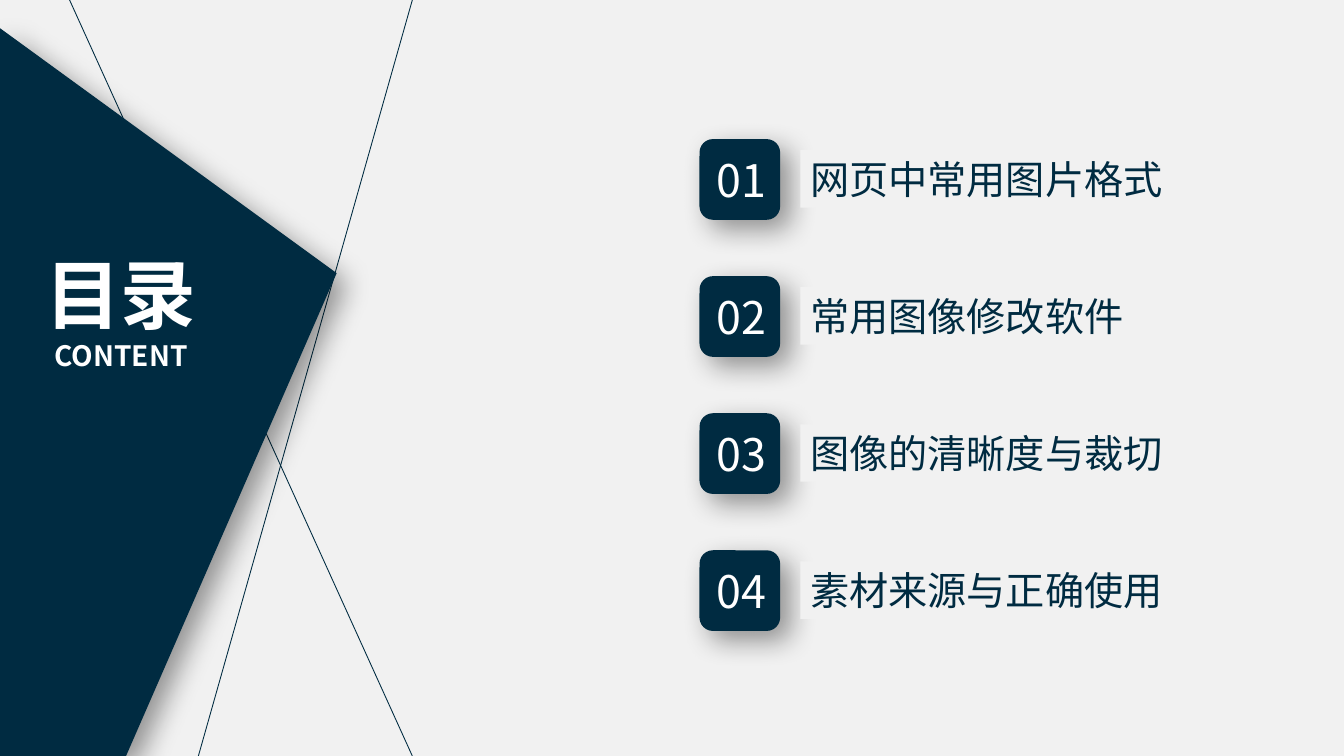
from dataclasses import dataclass

from lxml.etree import SubElement
from pptx import Presentation
from pptx.dml.color import RGBColor
from pptx.enum.shapes import MSO_CONNECTOR, MSO_SHAPE
from pptx.enum.text import MSO_ANCHOR, MSO_AUTO_SIZE, PP_ALIGN
from pptx.oxml.ns import qn
from pptx.shapes.autoshape import Shape
from pptx.shapes.shapetree import SlideShapes
from pptx.text.text import TextFrame, _Paragraph
from pptx.util import Emu, Inches, Pt


@dataclass(frozen=True)
class Theme:
    navy: RGBColor = RGBColor(0x00, 0x2B, 0x41)
    paper: RGBColor = RGBColor(0xF1, 0xF1, 0xF1)
    white: RGBColor = RGBColor(0xFF, 0xFF, 0xFF)
    font: str = "Noto Sans CJK SC"
    heading: Pt = Pt(54)
    subheading: Pt = Pt(20)
    number: Pt = Pt(32)
    topic: Pt = Pt(28)
    hairline: Pt = Pt(0.63)


@dataclass(frozen=True)
class Point:
    """A position in columns and rows."""
    col: float
    row: float


@dataclass(frozen=True)
class Area:
    """A rectangle in columns and rows."""
    col: float
    row: float
    cols: float
    rows: float


@dataclass(frozen=True)
class Topic:
    name: str
    cols: float


THEME = Theme()
SLIDE_WIDTH, SLIDE_HEIGHT = Inches(13.333), Inches(7.5)
GRID = 100  # columns across the slide and rows down it

TITLE_AREA = Area(1.8, 32, 14.4, 18)
WEDGE = [Point(9.38, 100), Point(0, 100), Point(0, 3.73), Point(25.05, 36.13)]
RAYS = [
    (Point(30.68, 0), Point(14.55, 101.33)),
    (Point(30.68, 100), Point(4.5, -2.67)),
]
TOPICS = [
    Topic("网页中常用图片格式", 28.65),
    Topic("常用图像修改软件", 27.3),
    Topic("图像的清晰度与裁切", 29.78),
    Topic("素材来源与正确使用", 28.65),
]
FIRST_ROW, ROW_PITCH = 18.4, 18.13


def x(cols: float) -> Emu:
    return Emu(round(SLIDE_WIDTH * cols / GRID))


def y(rows: float) -> Emu:
    return Emu(round(SLIDE_HEIGHT * rows / GRID))


def box(area: Area) -> tuple[Emu, Emu, Emu, Emu]:
    return x(area.col), y(area.row), x(area.cols), y(area.rows)


def paint(shape: Shape, color: RGBColor) -> None:
    shape.fill.solid()
    shape.fill.fore_color.rgb = color
    shape.line.fill.background()
    shape.shadow.inherit = False


def cast_shadow(shape: Shape) -> None:
    effects = shape.element.spPr.find(qn("a:effectLst"))
    shadow = SubElement(effects, qn("a:outerShdw"), blurRad=str(Pt(20)),
                        dist=str(Pt(10)), dir="2700000", algn="tl", rotWithShape="0")
    black = SubElement(shadow, qn("a:srgbClr"), val="000000")
    SubElement(black, qn("a:alpha"), val="40000")


def set_frame(frame: TextFrame, wrap: bool = True) -> None:
    layout = {"word_wrap": wrap, "auto_size": MSO_AUTO_SIZE.NONE,
              "vertical_anchor": MSO_ANCHOR.MIDDLE}
    for name, value in layout.items():
        setattr(frame, name, value)


def write(paragraph: _Paragraph, text: str, size: Pt, color: RGBColor,
          bold: bool = False, align: PP_ALIGN = PP_ALIGN.LEFT) -> None:
    paragraph.alignment = align
    run = paragraph.add_run()
    run.text = text
    run.font.color.rgb = color
    for name, value in {"size": size, "bold": bold, "name": THEME.font}.items():
        setattr(run.font, name, value)
    SubElement(run._r.get_or_add_rPr(), qn("a:ea"), typeface=THEME.font)


def draw_ray(shapes: SlideShapes, start: Point, end: Point) -> None:
    ray = shapes.add_connector(MSO_CONNECTOR.STRAIGHT, x(start.col), y(start.row),
                               x(end.col), y(end.row))
    ray.line.color.rgb = THEME.navy
    ray.line.width = THEME.hairline
    SubElement(ray.element.spPr, qn("a:effectLst"))


def draw_wedge(shapes: SlideShapes) -> Shape:
    first, *rest = [(x(corner.col), y(corner.row)) for corner in WEDGE]
    outline = shapes.build_freeform(*first)
    outline.add_line_segments(rest, close=True)
    wedge = outline.convert_to_shape()
    paint(wedge, THEME.navy)
    cast_shadow(wedge)
    return wedge


def place_title(title: Shape, wedge: Shape) -> None:
    """Put the title placeholder in front of the wedge."""
    wedge.element.addnext(title.element)
    title.left, title.top, title.width, title.height = box(TITLE_AREA)
    frame = title.text_frame
    set_frame(frame)
    write(frame.paragraphs[0], "目录", THEME.heading, THEME.white, True, PP_ALIGN.CENTER)
    write(frame.add_paragraph(), "CONTENT", THEME.subheading, THEME.white, True,
          PP_ALIGN.CENTER)


def draw_topic(shapes: SlideShapes, index: int, topic: Topic) -> None:
    row = FIRST_ROW + index * ROW_PITCH
    badge = shapes.add_shape(MSO_SHAPE.ROUNDED_RECTANGLE, *box(Area(52.05, row, 6, 10.67)))
    paint(badge, THEME.navy)
    cast_shadow(badge)

    number = shapes.add_textbox(*box(Area(52.58, row + 1.07, 5.25, 8.53)))
    set_frame(number.text_frame, wrap=False)
    write(number.text_frame.paragraphs[0], f"{index + 1:02}", THEME.number, THEME.white)

    label = shapes.add_shape(MSO_SHAPE.RECTANGLE,
                             *box(Area(59.55, row + 1.47, topic.cols, 7.6)))
    paint(label, THEME.paper)
    set_frame(label.text_frame)
    write(label.text_frame.paragraphs[0], topic.name, THEME.topic, THEME.navy)


def main() -> None:
    deck = Presentation()
    deck.slide_width, deck.slide_height = SLIDE_WIDTH, SLIDE_HEIGHT
    slide = deck.slides.add_slide(deck.slide_layouts.get_by_name("Title Only"))
    slide.background.fill.solid()
    slide.background.fill.fore_color.rgb = THEME.paper

    for start, end in RAYS:
        draw_ray(slide.shapes, start, end)
    wedge = draw_wedge(slide.shapes)
    place_title(slide.shapes.title, wedge)
    for index, topic in enumerate(TOPICS):
        draw_topic(slide.shapes, index, topic)
    deck.save("out.pptx")


if __name__ == "__main__":
    main()
